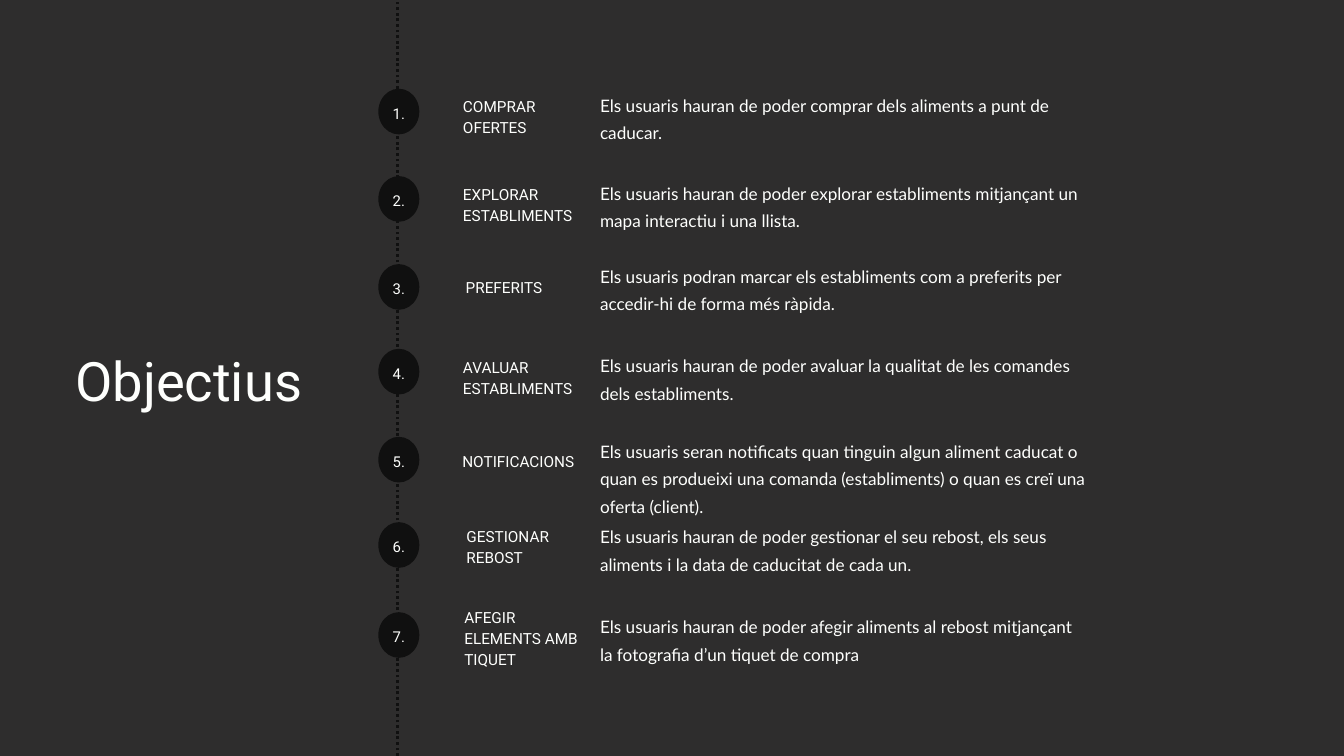
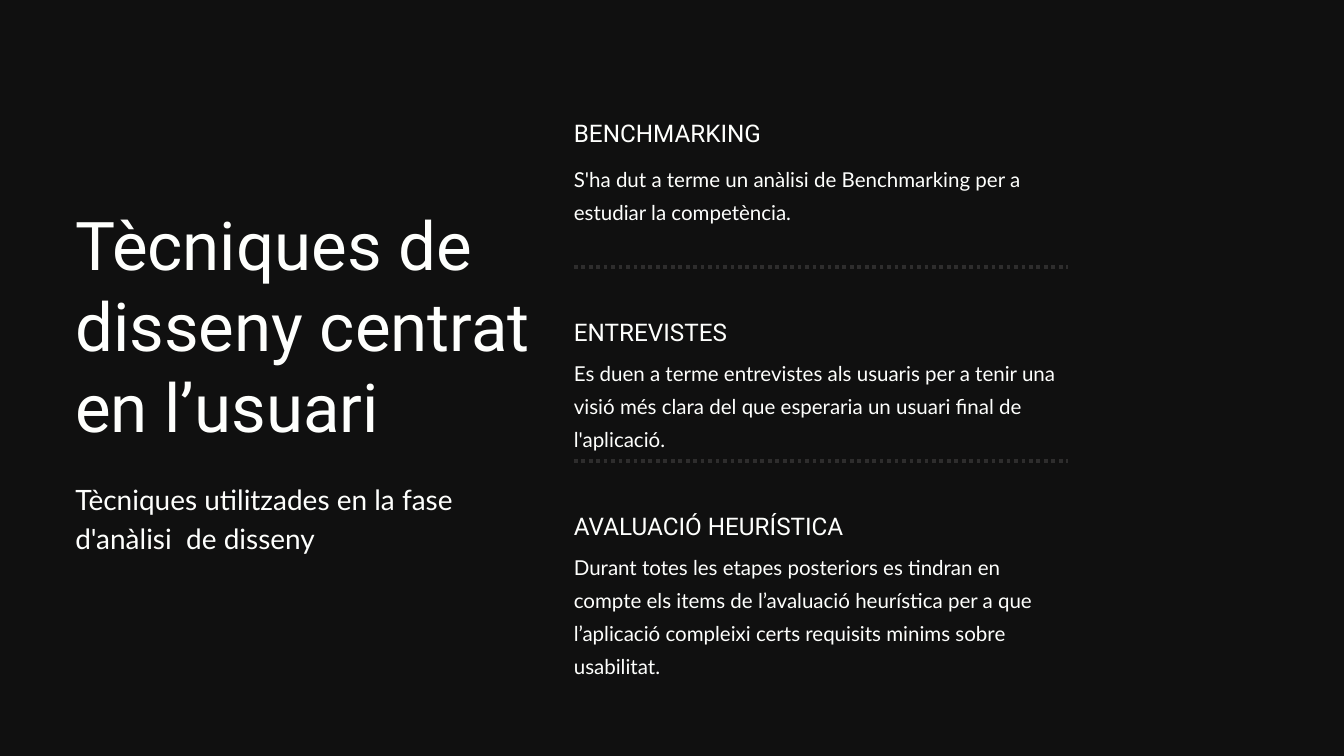
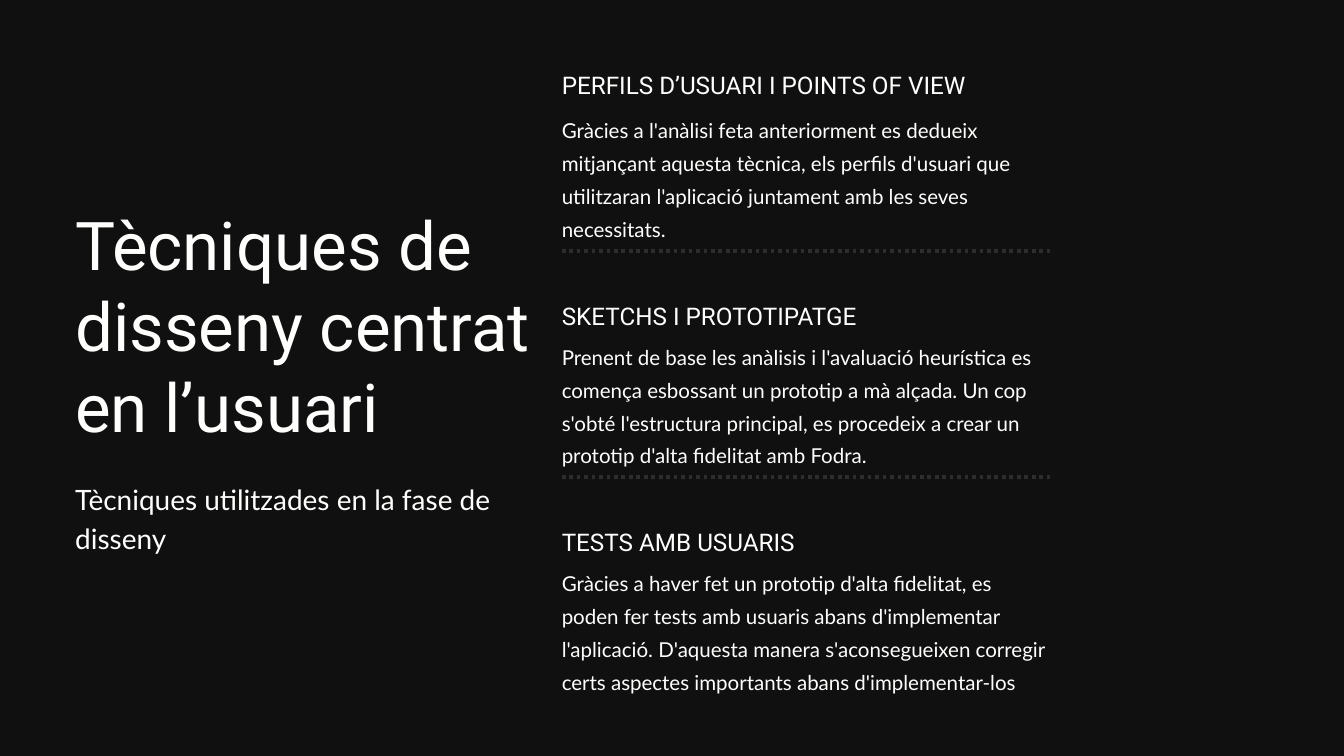
from lxml import etree
from pptx import Presentation
from pptx import util as u
from pptx.dml.color import RGBColor
from pptx.enum import dml, shapes, text
from pptx.oxml.ns import qn

COLS, ROWS = 20, 11.25
BLACK, GREY, WHITE = "101010", "2E2D2D", "FEFFFD"
STYLES = {
    "big_title": ("Roboto", 72, 86.4),
    "title": ("Roboto", 58.2, 75.7),
    "subtitle": ("Lato", 30, 42),
    "heading": ("Roboto", 26, 36.4),
    "body": ("Lato", 22, 35.2),
    "goal": ("Lato", 18.4, 29.5),
    "label": ("Roboto", 16.4, 22.9),
    "number": ("Roboto", 16, 22.4),
}
MARGIN = 1.12


def rgb(value):
    return RGBColor.from_string(value)


class Deck:
    def __init__(self):
        self.prs = Presentation()
        self.prs.slide_width = u.Inches(20)
        self.prs.slide_height = u.Inches(11.25)
        self.s = None

    def x(self, cols):
        return round(self.prs.slide_width * cols / COLS)

    def y(self, rows):
        return round(self.prs.slide_height * rows / ROWS)

    def box(self, left, top, width, height):
        return self.x(left), self.y(top), self.x(width), self.y(height)

    def slide(self, background):
        self.s = self.prs.slides.add_slide(self.prs.slide_layouts[6])
        fill = self.s.background.fill
        fill.solid()
        fill.fore_color.rgb = rgb(background)

    def set_text(self, tf, content, style, align=text.PP_ALIGN.LEFT):
        font, size, leading = STYLES[style]
        tf.margin_left = tf.margin_right = tf.margin_top = tf.margin_bottom = 0
        tf.word_wrap = True
        tf.text = content
        p = tf.paragraphs[0]
        p.alignment = align
        p.line_spacing = u.Pt(leading)
        r = p.runs[0]
        r.font.name = font
        r.font.size = u.Pt(size)
        r.font.color.rgb = rgb(WHITE)

    def label(self, content, style, left, top, width, lines=1):
        height = lines * STYLES[style][2] / 72
        sp = self.s.shapes.add_textbox(*self.box(left, top, width, height))
        self.set_text(sp.text_frame, content, style)
        sp.text_frame.auto_size = text.MSO_AUTO_SIZE.SHAPE_TO_FIT_TEXT

    def badge(self, content, left, top, width, height):
        sp = self.s.shapes.add_shape(
            shapes.MSO_SHAPE.OVAL, *self.box(left, top, width, height))
        sp.shadow.inherit = False
        sp.fill.solid()
        sp.fill.fore_color.rgb = rgb(BLACK)
        sp.line.fill.background()
        self.set_text(sp.text_frame, content, "number", text.PP_ALIGN.CENTER)
        sp.text_frame.vertical_anchor = text.MSO_ANCHOR.MIDDLE
        sp.text_frame.word_wrap = False

    def dotted(self, x1, y1, x2, y2, color, weight):
        sp = self.s.shapes.add_connector(
            shapes.MSO_CONNECTOR.STRAIGHT,
            self.x(x1), self.y(y1), self.x(x2), self.y(y2))
        sp.line.color.rgb = rgb(color)
        sp.line.width = u.Pt(weight)
        sp.line.dash_style = dml.MSO_LINE.ROUND_DOT
        etree.SubElement(sp._element.spPr, qn("a:effectLst"))

    def techniques(self, subtitle, title_width, left, width, sections):
        self.slide(BLACK)
        self.label("Tècniques de disseny centrat en l’usuari", "big_title",
                   MARGIN, 3.03, title_width, 3)
        self.label(subtitle, "subtitle", MARGIN, 7.09, title_width, 2)
        for i, (top, heading, body, lines) in enumerate(sections):
            self.label(heading, "heading", left, top, width)
            self.label(body, "body", left, top + (0.6 if i else 0.67), width, lines)
            if i:
                self.dotted(left, top - 0.68, left + width, top - 0.68, GREY, 4)


GOALS = [
    (1.32, 1.31, 6.89, 1.4, "COMPRAR OFERTES", 2,
     "Els usuaris hauran de poder comprar dels aliments a punt de caducar.", 2),
    (2.62, 2.62, 6.89, 2.71, "EXPLORAR ESTABLIMENTS", 2,
     "Els usuaris hauran de poder explorar establiments mitjançant un mapa "
     "interactiu i una llista.", 2),
    (3.93, 3.86, 6.93, 4.1, "PREFERITS", 1,
     "Els usuaris podran marcar els establiments com a preferits per "
     "accedir-hi de forma més ràpida.", 2),
    (5.19, 5.19, 6.89, 5.28, "AVALUAR ESTABLIMENTS", 2,
     "Els usuaris hauran de poder avaluar la qualitat de les comandes dels "
     "establiments.", 2),
    (6.5, 6.46, 6.88, 6.68, "NOTIFICACIONS", 1,
     "Els usuaris seran notificats quan tinguin algun aliment caducat o quan "
     "es produeixi una comanda (establiments) o quan es creï una oferta "
     "(client).", 3),
    (7.77, 7.73, 6.94, 7.8, "GESTIONAR REBOST", 2,
     "Els usuaris hauran de poder gestionar el seu rebost, els seus aliments "
     "i la data de caducitat de cada un.", 2),
    (9.11, 9.07, 6.91, 9, "AFEGIR ELEMENTS AMB TIQUET", 3,
     "Els usuaris hauran de poder afegir aliments al rebost mitjançant la "
     "fotografia d’un tiquet de compra", 2),
]

ANALYSIS = [
    (1.69, "BENCHMARKING",
     "S'ha dut a terme un anàlisi de Benchmarking per a estudiar la "
     "competència.", 2),
    (4.65, "ENTREVISTES",
     "Es duen a terme entrevistes als usuaris per a tenir una visió més clara "
     "del que esperaria un usuari final de l'aplicació.", 3),
    (7.54, "AVALUACIÓ HEURÍSTICA",
     "Durant totes les etapes posteriors es tindran en compte els items de "
     "l’avaluació heurística per a que l’aplicació compleixi certs requisits "
     "minims sobre usabilitat.", 4),
]

DESIGN = [
    (0.97, "PERFILS D’USUARI I POINTS OF VIEW",
     "Gràcies a l'anàlisi feta anteriorment es dedueix mitjançant aquesta "
     "tècnica, els perfils d'usuari que utilitzaran l'aplicació juntament amb "
     "les seves necessitats.", 4),
    (4.41, "SKETCHS I PROTOTIPATGE",
     "Prenent de base les anàlisis i l'avaluació heurística es comença "
     "esbossant un prototip a mà alçada. Un cop s'obté l'estructura principal, "
     "es procedeix a crear un prototip d'alta fidelitat amb Fodra.", 4),
    (7.78, "TESTS AMB USUARIS",
     "Gràcies a haver fet un prototip d'alta fidelitat, es poden fer tests amb "
     "usuaris abans d'implementar l'aplicació. D'aquesta manera "
     "s'aconsegueixen corregir certs aspectes importants abans "
     "d'implementar-los", 4),
]


def main():
    deck = Deck()
    deck.slide(GREY)
    deck.dotted(5.92, ROWS, 5.92, 0, BLACK, 3)
    for n, goal in enumerate(GOALS, 1):
        top, goal_top, left, name_top, name, name_lines, body, lines = goal
        deck.badge(f"{n}.", 5.63, top, 0.61, 0.68)
        deck.label(body, "goal", 8.93, goal_top, 7.23, lines)
        deck.label(name, "label", left, name_top, 1.84, name_lines)
    deck.label("Objectius", "title", MARGIN, 5.08, 5.38)

    deck.techniques("Tècniques utilitzades en la fase d'anàlisi  de disseny",
                    6.98, 8.54, 7.36, ANALYSIS)
    deck.techniques("Tècniques utilitzades en la fase de disseny",
                    7.23, 8.36, 7.26, DESIGN)
    deck.prs.save("out.pptx")


if __name__ == "__main__":
    main()
